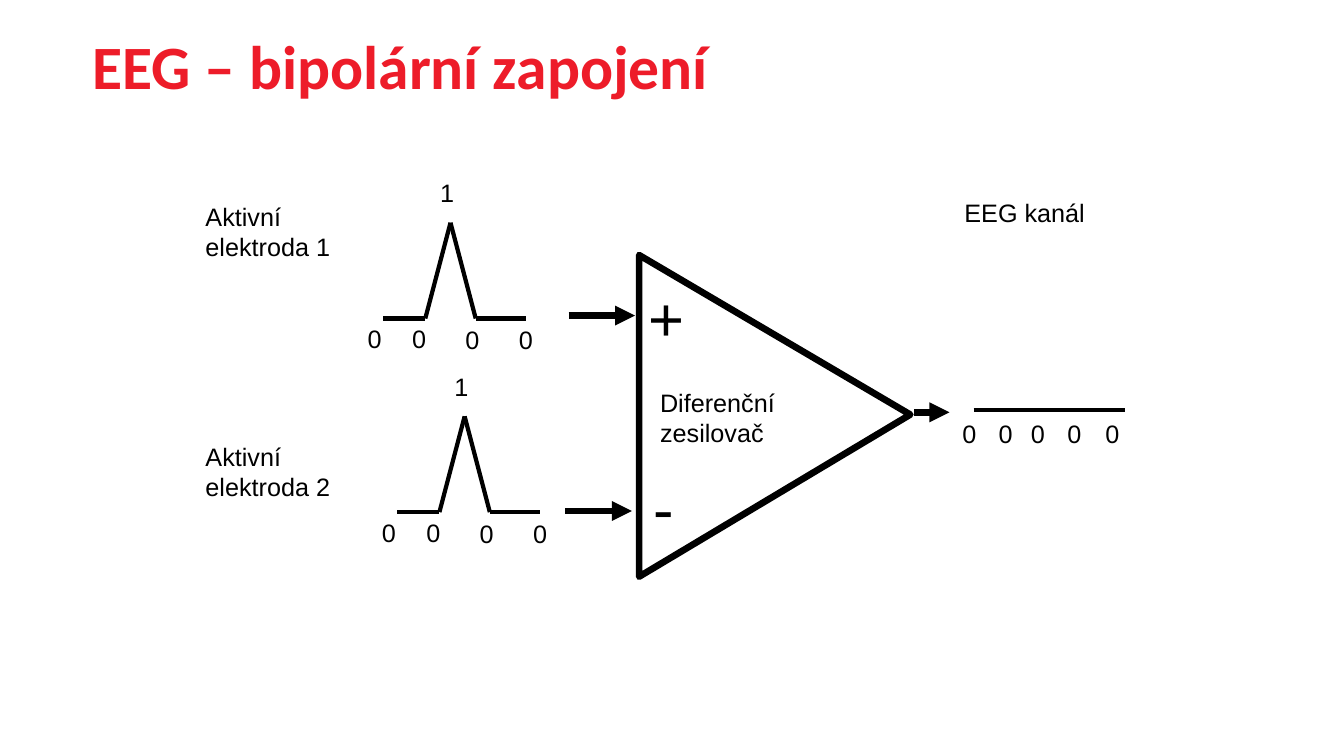
from lxml import etree
from pptx import Presentation
from pptx.dml.color import RGBColor
from pptx.enum.shapes import MSO_CONNECTOR, MSO_SHAPE
from pptx.oxml.ns import qn
from pptx.util import Pt

BLACK = RGBColor(0, 0, 0)
RED = RGBColor(0xED, 0x1C, 0x29)
LINE = MSO_CONNECTOR.STRAIGHT
WEDGE = MSO_SHAPE.ISOSCELES_TRIANGLE
THICK = 4.75
THIN = 3


def add_text(shapes, text, x, y, w, h, size=18, wrap=False,
             font="Arial", color=BLACK, bold=False):
    box = shapes.add_textbox(Pt(x), Pt(y), Pt(w), Pt(h))
    frame = box.text_frame
    frame.word_wrap = wrap
    frame.text = text
    style = frame.paragraphs[0].runs[0].font
    style.name = font
    style.size = Pt(size)
    style.bold = bold
    style.color.rgb = color


def add_digit(shapes, text, x, y):
    add_text(shapes, text, x, y, 24.5, 29)


def add_line(shapes, start, end, width=THIN):
    line = shapes.add_connector(LINE, Pt(start[0]), Pt(start[1]),
                                Pt(end[0]), Pt(end[1]))
    line.line.color.rgb = BLACK
    line.line.width = Pt(width)
    etree.SubElement(line._element.spPr, qn("a:effectLst"))
    return line


def add_arrow(shapes, x, y, length):
    arrow = add_line(shapes, (x, y), (x + length, y), THICK)
    tail = etree.SubElement(arrow.line._get_or_add_ln(), qn("a:tailEnd"))
    tail.set("type", "triangle")


def add_pulse(shapes, x, y):
    group = shapes.add_group_shape().shapes
    points = [(x, y), (x + 30.2, y), (x + 48.2, y - 68.4),
              (x + 66.2, y), (x + 102.2, y)]
    for start, end in zip(points, points[1:]):
        add_line(group, start, end)
    add_digit(group, "1", x + 33.8, y - 104.4)
    for dx, dy in ((-18, 0), (13.7, 0), (51.8, 0.7), (90, 0.7)):
        add_digit(group, "0", x + dx, y + dy)


def add_output(shapes, x, y):
    group = shapes.add_group_shape().shapes
    add_line(group, (x, y), (x + 108, y))
    for dx in (-15.1, 10.8, 33.8, 59.8, 87.1):
        add_digit(group, "0", x + dx, y + 2.2)


def add_amp(shapes):
    amp = shapes.add_shape(WEDGE, Pt(438.5), Pt(200.2), Pt(229.7), Pt(193.7))
    amp.rotation = 90
    amp.adjustments[0] = 0.496
    amp.shadow.inherit = False
    amp.fill.background()
    amp.line.color.rgb = BLACK
    amp.line.width = Pt(THICK)
    etree.SubElement(amp.line._get_or_add_ln(), qn("a:round"))


def main():
    deck = Presentation()
    deck.slide_width = Pt(960)
    deck.slide_height = Pt(540)
    shapes = deck.slides.add_slide(deck.slide_layouts[6]).shapes

    add_text(shapes, "EEG – bipolární zapojení", 59, 16.6, 670, 60.5,
             44, True, "Calibri", RED, True)

    add_text(shapes, "+", 455.8, 196.6, 40.3, 60.5, 44)
    add_text(shapes, "-", 459.4, 331.9, 29.5, 60.5, 44)
    add_amp(shapes)
    for x, y, length in ((406.1, 225.4, 47.5), (403.9, 365, 47.5),
                         (653, 294.5, 25.2)):
        add_arrow(shapes, x, y, length)

    add_pulse(shapes, 273.6, 227.5)
    add_pulse(shapes, 283.7, 365.8)
    add_output(shapes, 695.5, 293)

    for text, x, y, w, h in (
            ("Aktivní elektroda 1", 139.7, 140.4, 128.9, 51),
            ("Aktivní elektroda 2", 139.7, 311.8, 128.9, 51),
            ("Diferenční zesilovač", 464.4, 272.9, 173, 51),
            ("EEG kanál", 681.8, 137.5, 173.5, 29)):
        add_text(shapes, text, x, y, w, h, wrap=True)

    deck.save("out.pptx")


if __name__ == "__main__":
    main()
